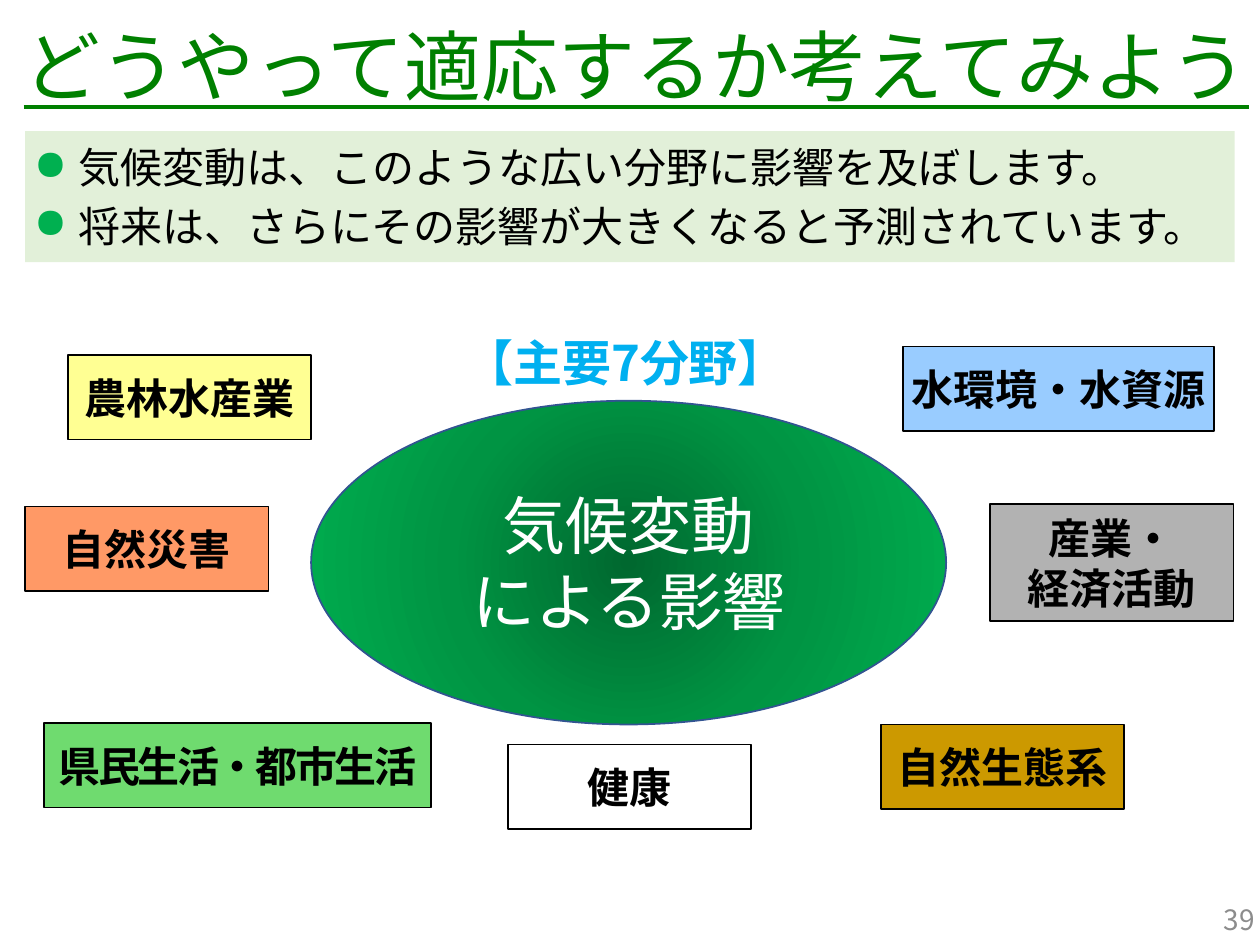
from dataclasses import dataclass

from lxml import etree
from pptx import Presentation
from pptx.dml.color import RGBColor
from pptx.enum.shapes import MSO_SHAPE
from pptx.enum.text import MSO_ANCHOR, PP_ALIGN
from pptx.oxml import parse_xml
from pptx.oxml.ns import nsdecls, qn
from pptx.util import Pt

RECTANGLE, OVAL = MSO_SHAPE.RECTANGLE, MSO_SHAPE.OVAL
LEFT, CENTER, RIGHT = PP_ALIGN.LEFT, PP_ALIGN.CENTER, PP_ALIGN.RIGHT
TOP, MIDDLE = MSO_ANCHOR.TOP, MSO_ANCHOR.MIDDLE


@dataclass(frozen=True)
class Theme:
    font: str = "Noto Sans CJK JP"
    title: str = "008000"
    heading: str = "00B0F0"
    ink: str = "000000"
    light: str = "FFFFFF"
    muted: str = "8C8C8C"
    panel: str = "E2F0D9"
    bullet: str = "00B050"
    hub_line: str = "325491"
    hub_stops: tuple = ((0, "00682F"), (50, "009443"), (100, "00B050"))
    title_size: int = 44
    hub_size: int = 36
    heading_size: int = 28
    body_size: int = 24
    page_size: int = 16


THEME = Theme()
SECTOR_WIDTH, SECTOR_HEIGHT = 139, 48.2
SECTORS = [
    ("自然災害", (14.4, 289.4), "FF9966", {}),
    ("農林水産業", (38.9, 203), "FFFF66", {"opacity": 70}),
    ("水環境・水資源", (516.2, 198), "99CCFF", {"width": 177.8}),
    ("自然生態系", (503.3, 414), "CC9900", {}),
    ("産業・\n経済活動", (565.9, 288), "B2B2B2", {"height": 67}),
    ("県民生活・都市生活", (25.2, 413.3), "33CC33",
     {"width": 221, "opacity": 70, "tracking": -1.5}),
    ("健康", (290.2, 425.5), None, {}),
]


def add_bullet(paragraph, indent):
    props = paragraph._p.get_or_add_pPr()
    props.set("marL", str(Pt(indent)))
    props.set("indent", str(Pt(-indent)))
    color = etree.SubElement(props, qn("a:buClr"))
    etree.SubElement(color, qn("a:srgbClr"), val=THEME.bullet)
    etree.SubElement(props, qn("a:buChar"), char="●")


def write_text(holder, text, *, size, color=THEME.ink, bold=False, underline=False,
               align=CENTER, anchor=MIDDLE, insets=(7.2, 3.6), before=0,
               tracking=0, bullet_indent=0):
    frame = holder.text_frame
    frame.word_wrap = True
    frame.vertical_anchor = anchor
    frame.margin_left = frame.margin_right = Pt(insets[0])
    frame.margin_top = frame.margin_bottom = Pt(insets[1])
    for index, line in enumerate(text.split("\n")):
        paragraph = frame.add_paragraph() if index else frame.paragraphs[0]
        paragraph.alignment = align
        paragraph.space_before = Pt(before)
        if bullet_indent:
            add_bullet(paragraph, bullet_indent)
        run = paragraph.add_run()
        run.text = line
        font = run.font
        font.name, font.size = THEME.font, Pt(size)
        font.bold, font.underline = bold, underline
        font.color.rgb = RGBColor.from_string(color)
        props = run._r.get_or_add_rPr()
        props.set("lang", "ja-JP")
        etree.SubElement(props, qn("a:ea"), typeface=THEME.font)
        if tracking:
            props.set("spc", str(int(tracking * 100)))


def add_label(slide, box, text, **text_format):
    label = slide.shapes.add_textbox(*map(Pt, box))
    write_text(label, text, **text_format)


def add_block(slide, box, preset=RECTANGLE, fill=None, line=None, opacity=100):
    block = slide.shapes.add_shape(preset, *map(Pt, box))
    block.shadow.inherit = False
    if fill:
        block.fill.solid()
        block.fill.fore_color.rgb = RGBColor.from_string(fill)
        if opacity < 100:
            color = block._element.spPr.find(qn("a:solidFill"))[0]
            etree.SubElement(color, qn("a:alpha"), val=str(opacity * 1000))
    else:
        block.fill.background()
    if line:
        block.line.color.rgb = RGBColor.from_string(line)
        block.line.width = Pt(1)
    else:
        block.line.fill.background()
    return block


def radiate(block, stops):
    marks = "".join(f'<a:gs pos="{position * 1000}"><a:srgbClr val="{color}"/></a:gs>'
                    for position, color in stops)
    gradient = parse_xml(
        f'<a:gradFill {nsdecls("a")} rotWithShape="1"><a:gsLst>{marks}</a:gsLst>'
        '<a:path path="circle"><a:fillToRect l="50000" t="50000" r="50000" b="50000"/>'
        '</a:path></a:gradFill>')
    props = block._element.spPr
    props.replace(props.find(qn("a:noFill")), gradient)


def add_sector(slide, name, corner, fill, width=SECTOR_WIDTH, height=SECTOR_HEIGHT,
               opacity=100, tracking=0):
    sector = add_block(slide, (*corner, width, height), fill=fill, line=THEME.ink,
                       opacity=opacity)
    write_text(sector, name, size=THEME.body_size, bold=True, insets=(2.88, 2.88),
               tracking=tracking)


def add_hub(slide, box):
    hub = add_block(slide, box, preset=OVAL, line=THEME.hub_line)
    radiate(hub, THEME.hub_stops)
    write_text(hub, "気候変動\nによる影響", size=THEME.hub_size, color=THEME.light)


def add_summary(slide, box):
    summary = add_block(slide, box, fill=THEME.panel)
    write_text(summary,
               "気候変動は、このような広い分野に影響を及ぼします。\n"
               "将来は、さらにその影響が大きくなると予測されています。",
               size=THEME.body_size, align=LEFT, insets=(5.04, 2.88),
               before=4.8, bullet_indent=25.2)


def main():
    deck = Presentation()
    deck.slide_width, deck.slide_height = Pt(720), Pt(540)
    slide = deck.slides.add_slide(deck.slide_layouts[6])
    add_label(slide, (558, 511.2, 162, 28.8), "39", size=THEME.page_size,
              color=THEME.muted, align=RIGHT, insets=(2.88, 3.6))
    for name, corner, fill, options in SECTORS:
        add_sector(slide, name, corner, fill, **options)
    add_hub(slide, (177.8, 229, 362.9, 185))
    add_summary(slide, (14.4, 74.9, 691.2, 74.9))
    add_label(slide, (212.4, 186.5, 290.2, 41), "【主要7分野】",
              size=THEME.heading_size, color=THEME.heading, bold=True, anchor=TOP)
    add_label(slide, (3.6, 7.2, 720, 73.4), "どうやって適応するか考えてみよう",
              size=THEME.title_size, color=THEME.title, underline=True, anchor=TOP,
              before=8.8)
    deck.save("out.pptx")


if __name__ == "__main__":
    main()
